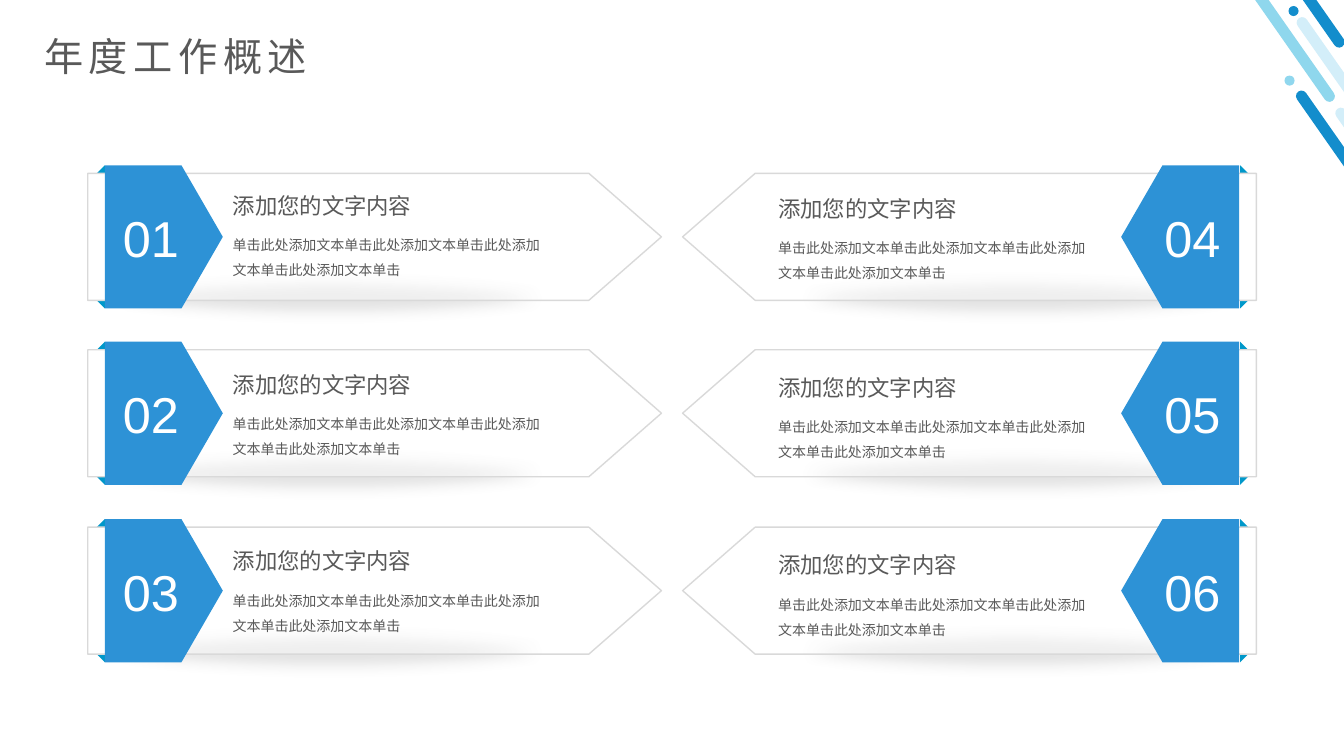
"""Builds a slide with six numbered banners in two mirrored columns."""
from lxml import etree
from pptx import Presentation
from pptx.dml.color import RGBColor
from pptx.enum.shapes import MSO_SHAPE
from pptx.enum.text import MSO_ANCHOR
from pptx.oxml.ns import qn
from pptx.util import Inches, Pt

PILL = MSO_SHAPE.ROUNDED_RECTANGLE
OVAL = MSO_SHAPE.OVAL
FOLD = MSO_SHAPE.RIGHT_TRIANGLE
MIDDLE = MSO_ANCHOR.MIDDLE

SLIDE_W, SLIDE_H = 13.33, 7.5
CJK, LATIN = "Noto Sans CJK SC", "Arial"
BLUE, FOLD_BLUE, GREY, EDGE = "2D92D6", "0098CA", "595959", "D9D9D9"
WHITE, SHADOW = "FFFFFF", "BFBFBF"

TITLE = "年度工作概述"
HEADING = "添加您的文字内容"
BODY = "单击此处添加文本单击此处添加文本单击此处添加文本单击此处添加文本单击"
ROW_CENTERS = (2.35, 4.1, 5.86)
COLUMNS = [
    {"mirrored": False, "text_left": 2.21, "number_left": 1.12,
     "items": [("01", 1.85), ("02", 3.63), ("03", 5.38)]},
    {"mirrored": True, "text_left": 7.62, "number_left": 11.45,
     "items": [("04", 1.88), ("05", 3.66), ("06", 5.42)]},
]
STROKES = [
    (13.45, 0.71, 2.19, "138DCC"),
    (13.84, 0.88, 2.19, "D3EEF9"),
    (12.37, -1.51, 2.76, "8FD7ED"),
    (13.62, -0.07, 2.76, "D3EEF9"),
    (12.63, -1.53, 2.19, "138DCC"),
]
DOTS = [(12.74, 0.75, "90D7EE"), (12.78, 0.06, "138DCC")]
BANNER = [(6.56, 0), (5.84, 0.63), (0.87, 0.63), (0.87, -0.63), (5.84, -0.63)]
TAG = [(2.21, 0), (1.8, 0.71), (1.04, 0.71), (1.04, -0.71), (1.8, -0.71)]
TITLE_FORMAT = {"name": CJK, "size": Pt(28)}
HEADING_FORMAT = {"name": CJK, "size": Pt(16)}
BODY_FORMAT = {"name": CJK, "size": Pt(10)}
NUMBER_FORMAT = {"name": LATIN, "size": Pt(36)}
BODY_SPACING = {"line_spacing": 1.5, "space_before": Pt(13.3)}


def color(value):
    return RGBColor.from_string(value)


def paint(shape, fill, line=None, alpha=None):
    shape.shadow.inherit = False
    shape.fill.solid()
    shape.fill.fore_color.rgb = color(fill)
    if alpha:
        tint = shape.fill._xPr.find(qn("a:solidFill"))[0]
        etree.SubElement(tint, qn("a:alpha"), val=str(alpha * 1000))
    if line:
        shape.line.color.rgb = color(line)
        shape.line.width = Pt(1)
    else:
        shape.line.fill.background()
    return shape


def add_preset(slide, kind, box, fill, rotation=0, alpha=None):
    shape = slide.shapes.add_shape(kind, *map(Inches, box))
    shape.rotation = rotation
    return paint(shape, fill, alpha=alpha)


def add_outline(slide, points, center, mirrored, fill, line=None, alpha=None):
    corners = [(Inches(SLIDE_W - x if mirrored else x), Inches(center + y))
               for x, y in points]
    builder = slide.shapes.build_freeform(*corners[0])
    builder.add_line_segments(corners[1:], close=True)
    return paint(builder.convert_to_shape(), fill, line, alpha)


def add_text(slide, text, box, formats, ink, wrap=False, spacing=None):
    frame = slide.shapes.add_textbox(*map(Inches, box)).text_frame
    frame.word_wrap = wrap
    frame.vertical_anchor = MIDDLE
    paragraph = frame.paragraphs[0]
    for name, value in (spacing or {}).items():
        setattr(paragraph, name, value)
    run = paragraph.add_run()
    run.text = text
    for name, value in formats.items():
        setattr(run.font, name, value)
    run.font.color.rgb = color(ink)
    etree.SubElement(run._r.get_or_add_rPr(), qn("a:ea"), typeface=formats["name"])
    return run


def add_shadow(slide, center, mirrored):
    left = SLIDE_W - 5.8 if mirrored else 0.73
    shadow = add_preset(slide, OVAL, (left, center + 0.33, 5.07, 0.54), SHADOW, alpha=45)
    effects = shadow._element.spPr.find(qn("a:effectLst"))
    etree.SubElement(effects, qn("a:softEdge"), rad=str(Pt(10)))


def add_card(slide, column, center, number, heading_top):
    mirrored, text_left = column["mirrored"], column["text_left"]
    add_shadow(slide, center, mirrored)
    fold_left = 12.3 if mirrored else 0.96
    for offset, rotation in ((-0.71, 0 if mirrored else 270), (0.63, 90 if mirrored else 180)):
        add_preset(slide, FOLD, (fold_left, center + offset, 0.08, 0.08), FOLD_BLUE, rotation)
    add_outline(slide, BANNER, center, mirrored, WHITE, EDGE, alpha=45)
    add_outline(slide, TAG, center, mirrored, BLUE)
    add_text(slide, BODY, (text_left, heading_top + 0.37, 3.35, 0.58),
             BODY_FORMAT, GREY, wrap=True, spacing=BODY_SPACING)
    add_text(slide, HEADING, (text_left, heading_top, 1.98, 0.37), HEADING_FORMAT, GREY)
    add_text(slide, number, (column["number_left"], center - 0.35, 0.76, 0.71),
             NUMBER_FORMAT, WHITE)


def main():
    deck = Presentation()
    deck.slide_width, deck.slide_height = Inches(SLIDE_W), Inches(SLIDE_H)
    slide = deck.slides.add_slide(deck.slide_layouts[6])
    for left, top, length, fill in STROKES:
        stroke = add_preset(slide, PILL, (left, top, 0.11, length), fill, 325)
        stroke.adjustments[0] = 0.5
    for left, top, fill in DOTS:
        add_preset(slide, OVAL, (left, top, 0.1, 0.1), fill)
    title = add_text(slide, TITLE, (0.34, 0.27, 13.02, 0.57), TITLE_FORMAT, GREY, wrap=True)
    title._r.get_or_add_rPr().set("spc", "400")
    for column in COLUMNS:
        for center, (number, heading_top) in zip(ROW_CENTERS, column["items"]):
            add_card(slide, column, center, number, heading_top)
    deck.save("out.pptx")


if __name__ == "__main__":
    main()
